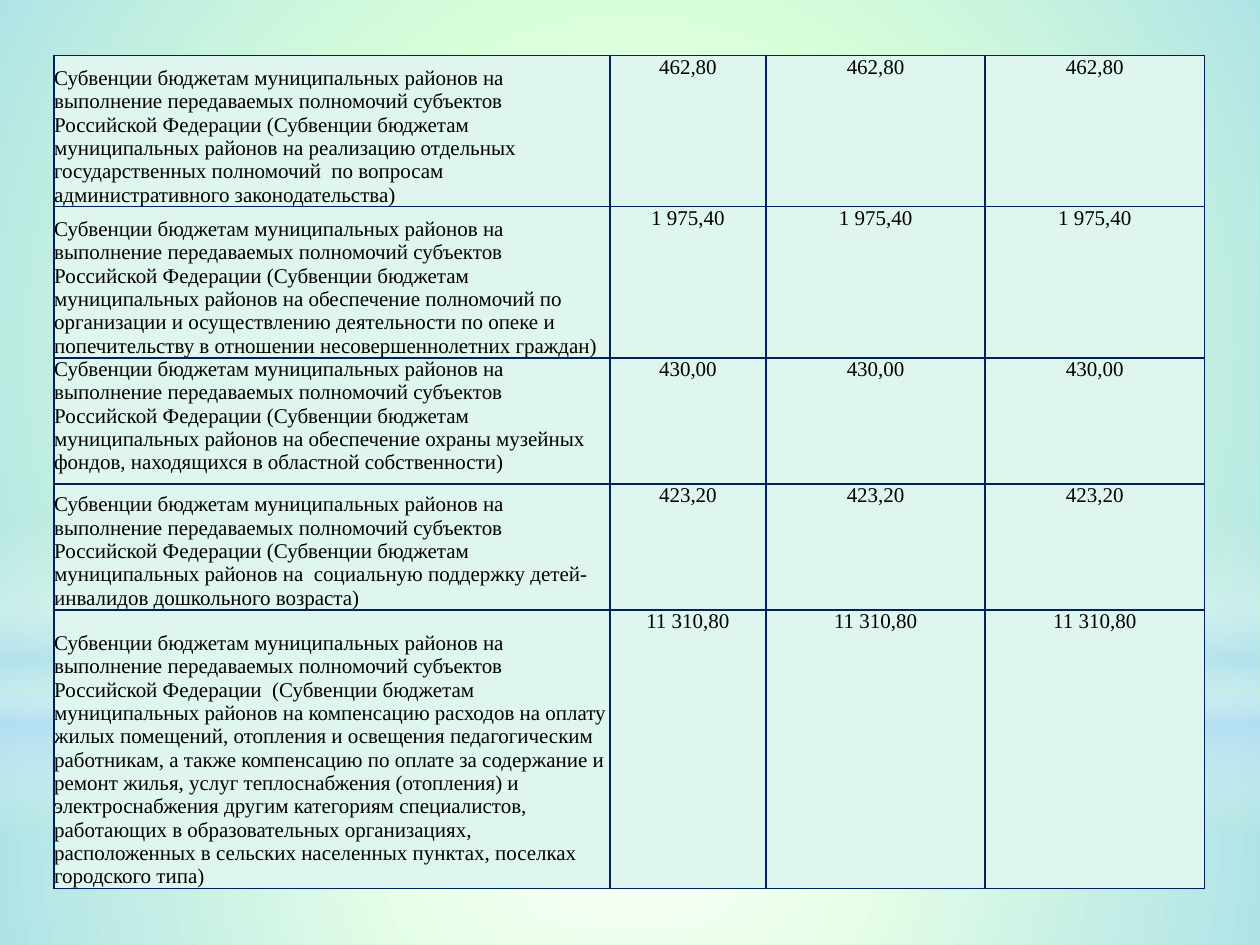
from lxml.etree import SubElement
from pptx import Presentation
from pptx.dml.color import RGBColor
from pptx.enum.shapes import MSO_SHAPE
from pptx.enum.text import MSO_ANCHOR, PP_ALIGN
from pptx.oxml import parse_xml
from pptx.oxml.ns import nsdecls, qn
from pptx.util import Inches, Pt

GREEN = RGBColor(0x99, 0xFF, 0x99)
WHITE = RGBColor(0xFF, 0xFF, 0xFF)
SKY = RGBColor(0xB4, 0xDC, 0xFA)
MINT = RGBColor(0xDF, 0xF5, 0xEF)
NAVY = RGBColor(0x00, 0x20, 0x60)
BLACK = RGBColor(0x00, 0x00, 0x00)

RADIAL = ('<a:path path="circle"><a:fillToRect l="50000" t="50000" '
          'r="50000" b="50000"/></a:path>')
LINEAR = '<a:lin ang="5400000" scaled="0"/>'

GLOWS = [
    (MSO_SHAPE.RECTANGLE, 5.58, 1.92, RADIAL,
     [(0, WHITE, 91), (37, WHITE, 76), (100, SKY, 79)]),
    (MSO_SHAPE.RECTANGLE, 0, 5.58, RADIAL,
     [(0, WHITE, 89), (48, WHITE, 62), (100, SKY, 79)]),
    (MSO_SHAPE.RECTANGLE, 4.12, 2.5, LINEAR,
     [(0, WHITE, 0), (29, WHITE, 30), (45, SKY, 40),
      (55, WHITE, 26), (65, SKY, 60), (100, WHITE, 0)]),
    (MSO_SHAPE.OVAL, 1.75, 5.58, RADIAL,
     [(0, WHITE, 100), (56, WHITE, 0)]),
]

GRANT = ("Субвенции бюджетам муниципальных районов на выполнение передаваемых "
         "полномочий субъектов Российской Федерации")
DISTRICTS = "(Субвенции бюджетам муниципальных районов на"
ROWS = [
    (1.2, MSO_ANCHOR.BOTTOM, "462,80",
     f"{GRANT} {DISTRICTS} реализацию отдельных государственных полномочий  "
     "по вопросам административного законодательства)"),
    (1.2, MSO_ANCHOR.BOTTOM, "1 975,40",
     f"{GRANT} {DISTRICTS} обеспечение полномочий по организации и "
     "осуществлению деятельности по опеке и попечительству в отношении "
     "несовершеннолетних граждан)"),
    (1, MSO_ANCHOR.TOP, "430,00",
     f"{GRANT} {DISTRICTS} обеспечение охраны музейных фондов, находящихся "
     "в областной собственности)"),
    (1, MSO_ANCHOR.BOTTOM, "423,20",
     f"{GRANT} {DISTRICTS}  социальную поддержку детей-инвалидов "
     "дошкольного возраста)"),
    (2.21, MSO_ANCHOR.BOTTOM, "11 310,80",
     f"{GRANT}  {DISTRICTS} компенсацию расходов на оплату жилых помещений, "
     "отопления и освещения педагогическим работникам, а также компенсацию "
     "по оплате за содержание и ремонт жилья, услуг теплоснабжения "
     "(отопления) и электроснабжения другим категориям специалистов, "
     "работающих в образовательных организациях, расположенных в сельских "
     "населенных пунктах, поселках городского типа)"),
]
COLUMNS = [4.41, 1.24, 1.74, 1.74]
MARGINS = {"margin_left": 0, "margin_top": 0, "margin_right": 0, "margin_bottom": 0}
FONT = {"name": "Times New Roman", "size": Pt(12), "bold": False}


def add_borders(cell):
    properties = cell._tc.get_or_add_tcPr()
    for index, side in enumerate(("lnL", "lnR", "lnT", "lnB")):
        line = parse_xml(
            f'<a:{side} {nsdecls("a")} w="{Pt(1)}"><a:solidFill>'
            f'<a:srgbClr val="{NAVY}"/></a:solidFill></a:{side}>')
        properties.insert(index, line)


deck = Presentation()
deck.slide_width = Inches(10)
deck.slide_height = Inches(7.5)
page = deck.slides.add_slide(deck.slide_layouts[6])
page.background.fill.solid()
page.background.fill.fore_color.rgb = GREEN

for kind, top, height, direction, stops in GLOWS:
    glow = page.shapes.add_shape(kind, 0, Inches(top), Inches(10), Inches(height))
    glow.shadow.inherit = False
    glow.line.fill.background()
    gradient = parse_xml(
        f'<a:gradFill {nsdecls("a")} rotWithShape="1"><a:gsLst/>{direction}</a:gradFill>')
    for position, color, opacity in stops:
        stop = SubElement(gradient[0], qn("a:gs"), pos=str(position * 1000))
        tint = SubElement(stop, qn("a:srgbClr"), val=str(color))
        SubElement(tint, qn("a:alpha"), val=str(opacity * 1000))
    glow._element.spPr.find(qn("a:prstGeom")).addnext(gradient)

frame = page.shapes.add_table(
    len(ROWS), len(COLUMNS), Inches(0.43), Inches(0.44),
    Inches(sum(COLUMNS)), Inches(sum(row[0] for row in ROWS)))
table = frame.table
table.first_row = False
table.horz_banding = False
for column, width in zip(table.columns, COLUMNS):
    column.width = Inches(width)

for row, (height, anchor, amount, purpose) in zip(table.rows, ROWS):
    row.height = Inches(height)
    for index, cell in enumerate(row.cells):
        for name, value in MARGINS.items():
            setattr(cell, name, value)
        cell.vertical_anchor = MSO_ANCHOR.TOP if index else anchor
        cell.fill.solid()
        cell.fill.fore_color.rgb = MINT
        add_borders(cell)
        para = cell.text_frame.paragraphs[0]
        para.alignment = PP_ALIGN.CENTER if index else PP_ALIGN.LEFT
        span = para.add_run()
        span.text = amount if index else purpose
        for name, value in FONT.items():
            setattr(span.font, name, value)
        span.font.color.rgb = BLACK

deck.save("out.pptx")
